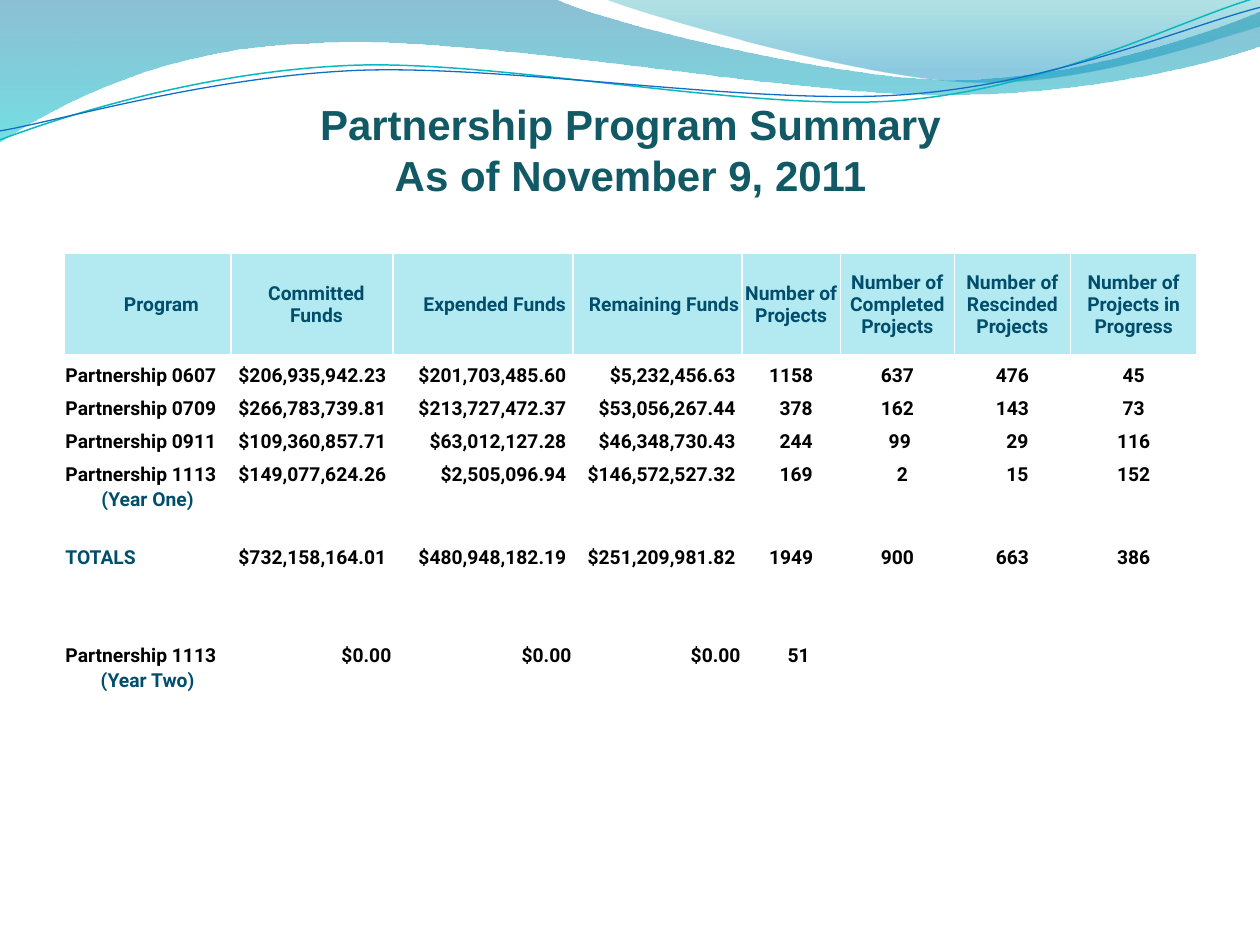
from lxml.etree import SubElement
from pptx import Presentation
from pptx.dml.color import RGBColor
from pptx.enum.text import MSO_ANCHOR, PP_ALIGN
from pptx.oxml import parse_xml
from pptx.oxml.ns import nsdecls, qn
from pptx.util import Cm, Pt

HEX = {"title": "115964", "label": "004E6C", "text": "000000", "head": "B3EAF2",
       "white": "FFFFFF", "teal": "0AB8BF", "blue": "0F6FC6"}
LEFT, MID, RIGHT = PP_ALIGN.LEFT, PP_ALIGN.CENTER, PP_ALIGN.RIGHT

# Content: a pair is (text, left indent in cm)
TITLE = ["Partnership Program Summary", "As of November 9, 2011"]
HEADS = [("Program", 0.56), ("Committed Funds", 0.18), ("Expended Funds", 0.48),
         ("Remaining Funds", 0.26), "Number of Projects", "Number of Completed Projects",
         "Number of Rescinded Projects", "Number of Projects in Progress"]
ROWS = [
    ["Partnership 0607", "$206,935,942.23", "$201,703,485.60", "$5,232,456.63",
     "1158", "637", "476", "45"],
    ["Partnership 0709", "$266,783,739.81", "$213,727,472.37", "$53,056,267.44",
     ("378", 0.2), "162", "143", "73"],
    ["Partnership 0911", "$109,360,857.71", "$63,012,127.28", "$46,348,730.43",
     ("244", 0.2), ("99", 0.1), ("29", 0.2), "116"],
    ["Partnership 1113", "$149,077,624.26", "$2,505,096.94", "$146,572,527.32",
     ("169", 0.2), ("2", 0.2), ("15", 0.2), "152"],
    ["(Year One)"],
    [],
    ["TOTALS", "$732,158,164.01", "$480,948,182.19", "$251,209,981.82",
     "1949", "900", "663", "386"],
    [],
    [],
    ["Partnership 1113", "$0.00", "$0.00", "$0.00", ("51", 0.3)],
    ["(Year Two)"],
]
COLS = [3.37, 3.26, 3.63, 3.41, 1.98, 2.3, 2.34, 2.55]
HIGH = [2.04] + [0.66] * 4 + [0.5] * 2 + [0.66] * 4 + [0.5]

# Waves: a start, then corners (x, y) or curves (x1, y1, x2, y2, x, y), in cm
BANDS = [
    ([(0, 0), (11.18, -0.03), (12.09, 0.43, 16.87, 1.6, 19.25, 1.6),
      (21.67, 1.6, 24.33, 0.66, 25.4, 0.23), (25.43, 0.91),
      (24.97, 1.12, 22.1, 1.93, 18.95, 1.91), (15.8, 1.91, 9.7, 0.71, 6.53, 0.86),
      (3.28, 0.91, 1.17, 2.11, -0.03, 2.87), (0, 0)],
     [(0, "0074A1", 45), (1, "00C6CF", 55)]),
    ([(12.17, -0.03), (12.93, 0.28, 17.32, 1.57, 19.53, 1.65),
      (21.74, 1.75, 24.41, 0.81, 25.4, 0.53), (25.4, 0), (12.17, -0.03)],
     [(0, "00A1A9", 30), (0.8, "008BBF", 45)]),
]
LINES = [
    ([(0, 2.82), (1.22, 2.36, 4.01, 1.45, 7.04, 1.32),
      (10.03, 1.19, 15.06, 2.26, 18.11, 2.03),
      (21.16, 1.8, 23.83, 0.38, 25.35, -0.05)], "teal", 0.85),
    ([(0, 2.64), (1.19, 2.44, 4.17, 1.55, 7.19, 1.42),
      (10.24, 1.3, 15.16, 2.13, 18.21, 1.91),
      (21.23, 1.7, 23.9, 0.53, 25.4, 0.15)], "blue", 0.75),
]


def rgb(name):
    return RGBColor.from_string(HEX[name])


def draw(slide, steps, close):
    """Build an outline, then join each three points of a curve into one Bezier."""
    dots = [(Cm(s[i]), Cm(s[i + 1])) for s in steps for i in range(0, len(s), 2)]
    pen = slide.shapes.build_freeform(*dots[0])
    pen.add_line_segments(dots[1:], close=close)
    shape = pen.convert_to_shape()
    shape.shadow.inherit = False
    legs = iter(shape._element.spPr.findall(".//" + qn("a:lnTo")))
    for step in steps[1:]:
        leg = next(legs)
        if len(step) == 6:
            leg.tag = qn("a:cubicBezTo")
            for _ in range(2):
                more = next(legs)
                leg.append(more[0])
                more.getparent().remove(more)
    return shape


def write(para, text, size, font, color, align):
    para.alignment = align
    run = para.add_run()
    run.text = text
    run.font.size, run.font.name, run.font.bold = Pt(size), font, True
    run.font.color.rgb = rgb(color)


def edge(cell):
    props = cell._tc.get_or_add_tcPr()
    for i, side in enumerate("LRTB"):
        props.insert(i, parse_xml(
            f'<a:ln{side} {nsdecls("a")} w="12700"><a:solidFill>'
            f'<a:srgbClr val="{HEX["white"]}"/></a:solidFill></a:ln{side}>'))


def style(r, c, text):
    """Colour and alignment of a table cell."""
    if r == 0:
        return "label", MID
    if c == 0:
        note = text.startswith("(")
        return ("label" if note or text == "TOTALS" else "text"), (MID if note else LEFT)
    return "text", (RIGHT if c < 4 else MID)


def fill(cell, r, c, item):
    text, pad = item if isinstance(item, tuple) else (item, 0)
    color, align = style(r, c, text)
    cell.margin_left = Cm(0.03 + pad)
    gap = 0.1 if align == RIGHT and text != "$0.00" else 0
    cell.margin_right = Cm(0.03 + gap)
    cell.margin_top, cell.margin_bottom = Cm(0.03), Cm(0)
    cell.vertical_anchor = MSO_ANCHOR.BOTTOM if r else MSO_ANCHOR.MIDDLE
    if r:
        cell.fill.background()
    else:
        cell.fill.solid()
        cell.fill.fore_color.rgb = rgb("head")
    edge(cell)
    para = cell.text_frame.paragraphs[0]
    if text:
        write(para, text, 11, "Roboto", color, align)
    else:
        SubElement(para._p, qn("a:endParaRPr"), sz="1100")


def main():
    deck = Presentation()
    deck.slide_width, deck.slide_height = Cm(25.4), Cm(19.05)
    slide = deck.slides.add_slide(deck.slide_layouts[5])

    # Waves
    for steps, stops in BANDS:
        band = draw(slide, steps, True)
        band.line.fill.background()
        band.fill.gradient()
        band.fill.gradient_angle = 270
        for stop, (pos, color, alpha) in zip(band.fill.gradient_stops, stops):
            stop.position = pos
            stop.color.rgb = RGBColor.from_string(color)
        marks = band._element.spPr.findall(".//" + qn("a:srgbClr"))
        for mark, stop in zip(marks, stops):
            SubElement(mark, qn("a:alpha"), val=str(stop[2] * 1000))
    for steps, color, width in LINES:
        line = draw(slide, steps, False)
        line.fill.background()
        line.line.color.rgb = rgb(color)
        line.line.width = Pt(width)

    # Title, in front of the waves
    title = slide.shapes.title
    slide.shapes._spTree.append(title._element)
    title.left, title.top, title.width, title.height = Cm(2.97), Cm(1.85), Cm(19.48), Cm(2.31)
    frame = title.text_frame
    frame.word_wrap = True
    frame.vertical_anchor = MSO_ANCHOR.MIDDLE
    for i, text in enumerate(TITLE):
        para = frame.add_paragraph() if i else frame.paragraphs[0]
        write(para, text, 24, "Arial", "title", MID)

    # Table
    grid = slide.shapes.add_table(len(HIGH), len(COLS), Cm(1.29), Cm(5.11),
                                  Cm(sum(COLS)), Cm(sum(HIGH))).table
    grid.first_row = grid.horz_banding = False
    for col, width in zip(grid.columns, COLS):
        col.width = Cm(width)
    for r, items in enumerate([HEADS] + ROWS):
        grid.rows[r].height = Cm(HIGH[r])
        for c in range(len(COLS)):
            fill(grid.cell(r, c), r, c, items[c] if c < len(items) else "")

    deck.save("out.pptx")


if __name__ == "__main__":
    main()
